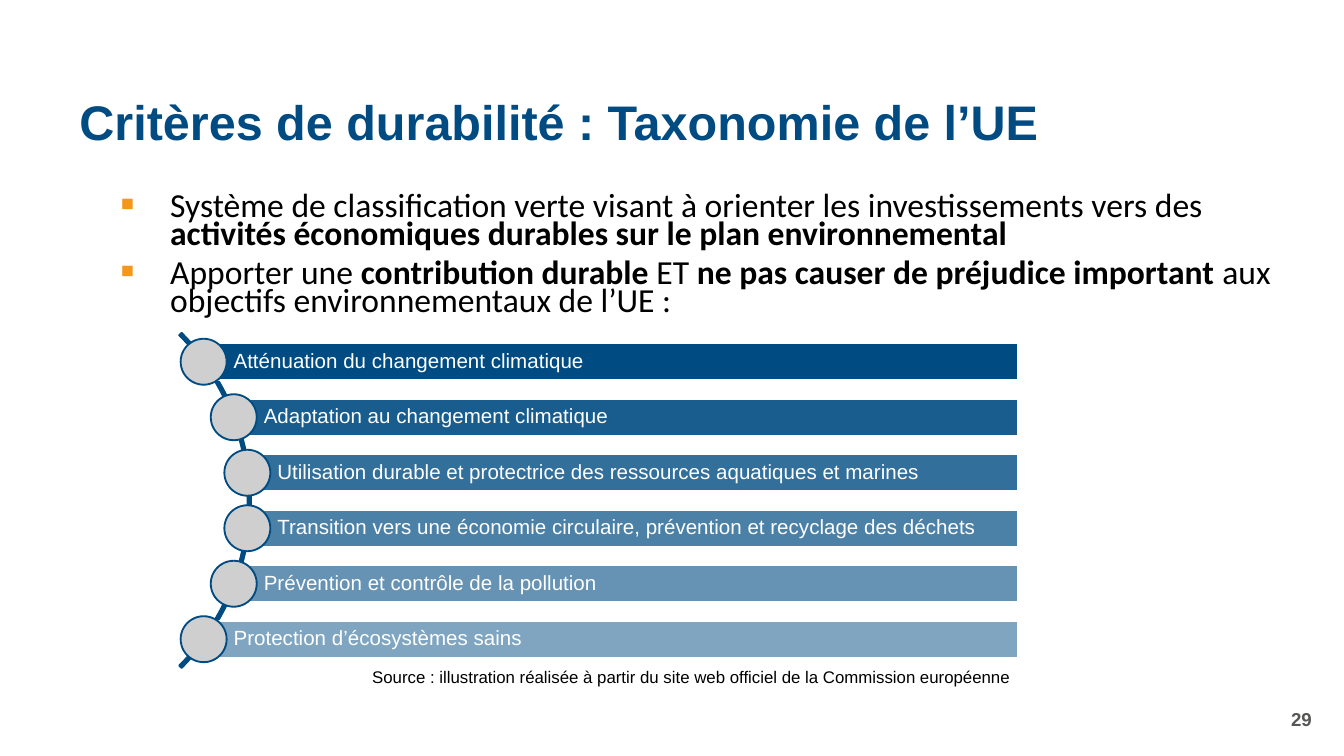
import math
from dataclasses import dataclass

import lxml.etree
import pptx
import pptx.dml.color
import pptx.enum.shapes
import pptx.enum.text
import pptx.oxml.ns
import pptx.util

EMU_PER_PX = 914400 / 134.4
SHAPE = pptx.enum.shapes.MSO_SHAPE
ALIGN = pptx.enum.text.PP_ALIGN
ANCHOR = pptx.enum.text.MSO_ANCHOR


@dataclass(frozen=True)
class Theme:
    navy: str = "004C82"
    orange: str = "F4971A"
    disc: str = "CFCFCF"
    grey: str = "575756"
    black: str = "000000"
    white: str = "FFFFFF"
    sans: str = "Arial"
    body: str = "Calibri"
    title_size: int = 26
    body_size: int = 18
    label_size: int = 11
    number_size: int = 10
    source_size: int = 9


THEME = Theme()

TITLE = "Critères de durabilité\u00a0: Taxonomie de l’UE"
# Each bullet is a list of (text, bold) runs
BULLETS = [
    [("Système de classification verte visant à orienter les investissements vers des ", False),
     ("activités économiques durables sur le plan environnemental", True)],
    [("Apporter une ", False), ("contribution durable", True), (" ET ", False),
     ("ne pas causer de préjudice important ", True),
     ("aux objectifs environnementaux de l’UE\u00a0:", False)],
]
OBJECTIVES = [
    "Atténuation du changement climatique",
    "Adaptation au changement climatique",
    "Utilisation durable et protectrice des ressources aquatiques et marines",
    "Transition vers une économie circulaire, prévention et recyclage des déchets",
    "Prévention et contrôle de la pollution",
    "Protection d’écosystèmes sains",
]
SOURCE = ("Source\u00a0: illustration réalisée à partir du site web officiel "
          "de la Commission européenne")


def px(length):
    return pptx.util.Emu(round(length * EMU_PER_PX))


def rgb(color):
    return pptx.dml.color.RGBColor.from_string(color)


def apply(target, **values):
    for name, value in values.items():
        setattr(target, name, value)


def style_font(font, size, color, name=THEME.sans, bold=False):
    apply(font, size=pptx.util.Pt(size), name=name, bold=bold)
    font.color.rgb = rgb(color)


def child(parent, tag, **attributes):
    return lxml.etree.SubElement(parent, pptx.oxml.ns.qn(tag), attributes)


def add_text(slide, box, text, size, color, bold=False, align=ALIGN.LEFT, **frame_values):
    frame = slide.shapes.add_textbox(*map(px, box)).text_frame
    apply(frame, word_wrap=True, **frame_values)
    line = frame.paragraphs[0]
    line.text = text
    line.alignment = align
    style_font(line.runs[0].font, size, color, bold=bold)


def add_figure(slide, kind, box, fill, line, opacity=100):
    figure = slide.shapes.add_shape(kind, *map(px, box))
    figure.shadow.inherit = False
    figure.fill.solid()
    figure.fill.fore_color.rgb = rgb(fill)
    figure.line.color.rgb = rgb(line)
    figure.line.width = pptx.util.Pt(1)
    if opacity < 100:
        color = figure.fill._xPr.find(".//" + pptx.oxml.ns.qn("a:srgbClr"))
        child(color, "a:alpha", val=str(opacity * 1000))
    return figure


def place_title(slide, box):
    title = slide.shapes.title
    apply(title, **dict(zip(("left", "top", "width", "height"), map(px, box))))
    title.text = TITLE
    apply(title.text_frame, word_wrap=True, vertical_anchor=ANCHOR.MIDDLE,
          auto_size=pptx.enum.text.MSO_AUTO_SIZE.NONE)
    line = title.text_frame.paragraphs[0]
    apply(line, alignment=ALIGN.LEFT, line_spacing=0.9)
    style_font(line.runs[0].font, THEME.title_size, THEME.navy, bold=True)


def place_bullets(slide, box):
    frame = slide.shapes.add_textbox(*map(px, box)).text_frame
    frame.word_wrap = True
    for index, runs in enumerate(BULLETS):
        item = frame.add_paragraph() if index else frame.paragraphs[0]
        apply(item, line_spacing=0.7, space_before=pptx.util.Pt(6 if index else 0))
        # Hanging orange square
        properties = item._p.get_or_add_pPr()
        properties.set("marL", str(px(91)))
        properties.set("indent", str(px(-50)))
        child(child(properties, "a:buClr"), "a:srgbClr", val=THEME.orange)
        child(properties, "a:buSzPct", val="125000")
        child(properties, "a:buFont", typeface=THEME.sans)
        child(properties, "a:buChar", char="▪")
        for text, bold in runs:
            run = item.add_run()
            run.text = text
            style_font(run.font, THEME.body_size, THEME.black, THEME.body, bold)


def place_objectives(slide, box):
    """Bars whose discs sit on a quarter circle bulging into the box."""
    left, top, width, height = box
    pitch = height / len(OBJECTIVES)
    radius, bar_height, disc = 235, 37, 46
    center_x, center_y = left - 166, top + height / 2

    # Arc behind the discs
    arc_radius = radius + 2
    arc = add_figure(slide, SHAPE.BLOCK_ARC,
                     (center_x - arc_radius, center_y - arc_radius, 2 * arc_radius, 2 * arc_radius),
                     THEME.navy, THEME.navy)
    for index, value in enumerate((189, 27, 0.007)):
        arc.adjustments[index] = value

    # One bar and disc per objective, each paler than the last
    for row, objective in enumerate(OBJECTIVES):
        y = top + (row + 0.5) * pitch
        x = center_x + math.sqrt(radius ** 2 - (y - center_y) ** 2)
        bar = add_figure(slide, SHAPE.RECTANGLE,
                         (x, y - bar_height / 2, left + width - x, bar_height),
                         THEME.navy, THEME.white, 100 - 10 * row)
        apply(bar.text_frame, word_wrap=True, vertical_anchor=ANCHOR.MIDDLE, margin_left=px(30),
              margin_right=px(4), margin_top=px(4), margin_bottom=px(4))
        label = bar.text_frame.paragraphs[0]
        label.text = objective
        apply(label, alignment=ALIGN.LEFT, line_spacing=0.9)
        style_font(label.runs[0].font, THEME.label_size, THEME.white)
        add_figure(slide, SHAPE.OVAL, (x - disc / 2, y - disc / 2, disc, disc),
                   THEME.disc, THEME.navy)


def main():
    deck = pptx.Presentation()
    apply(deck, slide_width=px(1344), slide_height=px(756))
    slide = deck.slides.add_slide(deck.slide_layouts[5])

    place_title(slide, (66, 85, 1259, 79))
    place_bullets(slide, (66, 188, 1224, 140))
    place_objectives(slide, (180, 334, 838, 333))
    # Source line and page number
    add_text(slide, (359, 660, 672, 34), SOURCE, THEME.source_size, THEME.black)
    add_text(slide, (1023, 699, 302, 40), "29", THEME.number_size, THEME.grey, bold=True,
             align=ALIGN.RIGHT, vertical_anchor=ANCHOR.MIDDLE)
    deck.save("out.pptx")


if __name__ == "__main__":
    main()
